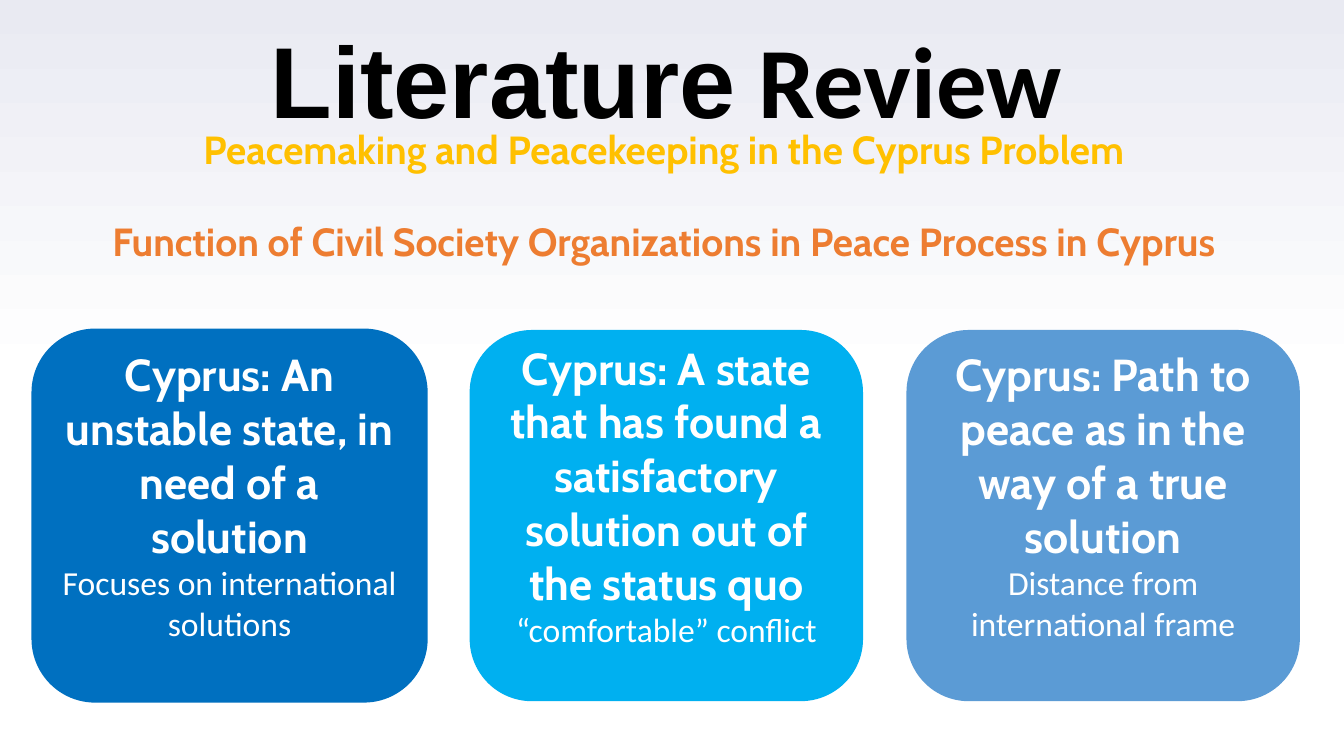
from copy import deepcopy

from pptx import Presentation
from pptx import util as u
from pptx.dml.color import RGBColor
from pptx.enum import shapes, text
from pptx.oxml import ns
from pptx.oxml.xmlchemy import OxmlElement


def rgb(value):
    return RGBColor.from_string(value)


def add_run(p, words, font="Calibri", size=24, color="FFFFFF", bold=False):
    r = p.add_run()
    r.text = words
    r.font.name = font
    r.font.size = u.Pt(size)
    r.font.bold = bold
    r.font.color.rgb = rgb(color)


class Deck:
    """Holds the style and the current slide, and adds its elements."""

    heading_font = "Cabin"
    card_top, card_width, card_height = 236.2, 280, 264.2

    def __init__(self, prs):
        self.s = prs.slides.add_slide(prs.slide_layouts[1])

    def background(self, stops, angle):
        fill = self.s.background.fill
        fill.gradient()
        fill.gradient_angle = angle
        gs_list = next(self.s.element.iter(ns.qn("a:gsLst")))
        gs_list.append(deepcopy(gs_list[-1]))
        for stop, (position, color) in zip(fill.gradient_stops, stops):
            stop.position = position
            stop.color.rgb = rgb(color)

    def place(self, sp, left, top, width, height):
        sp.left, sp.top, sp.width, sp.height = map(u.Pt, (left, top, width, height))
        tf = sp.text_frame
        tf.word_wrap = True
        tf.auto_size = text.MSO_AUTO_SIZE.NONE
        tf.vertical_anchor = text.MSO_ANCHOR.TOP
        tf.margin_left = tf.margin_right = tf.margin_top = tf.margin_bottom = 0
        return tf

    def title(self, runs, box):
        p = self.place(self.s.shapes.title, *box).paragraphs[0]
        p.alignment = text.PP_ALIGN.CENTER
        p.line_spacing = 0.9
        for words, font in runs:
            add_run(p, words, font=font, size=72, color="000000", bold=True)

    def body(self, lines, box):
        tf = self.place(self.s.placeholders[1], *box)
        for i, (words, color, gap) in enumerate(lines):
            p = tf.add_paragraph() if i else tf.paragraphs[0]
            p.alignment = text.PP_ALIGN.CENTER
            p.line_spacing = 0.9
            p.space_before = u.Pt(gap)
            pPr = p._p.get_or_add_pPr()
            pPr.set("marL", str(u.Pt(12)))
            pPr.set("indent", "0")
            pPr.append(OxmlElement("a:buNone"))
            add_run(p, words, font=self.heading_font, size=28, color=color, bold=True)

    def card(self, left, color, line_width, heading, note):
        sp = self.s.shapes.add_shape(
            shapes.MSO_SHAPE.ROUNDED_RECTANGLE,
            u.Pt(left), u.Pt(self.card_top), u.Pt(self.card_width), u.Pt(self.card_height))
        sp.shadow.inherit = False
        sp.fill.solid()
        sp.fill.fore_color.rgb = rgb(color)
        sp.line.color.rgb = rgb(color)
        sp.line.width = u.Pt(line_width)
        tf = sp.text_frame
        tf.word_wrap = True
        tf.vertical_anchor = text.MSO_ANCHOR.MIDDLE
        tf.margin_bottom = u.Pt(33)
        p = tf.paragraphs[0]
        p.alignment = text.PP_ALIGN.CENTER
        add_run(p, heading, font=self.heading_font, size=32, bold=True)
        p = tf.add_paragraph()
        p.alignment = text.PP_ALIGN.CENTER
        add_run(p, note)


def main():
    prs = Presentation()
    prs.slide_width, prs.slide_height = u.Pt(960), u.Pt(540)
    deck = Deck(prs)
    deck.background([(0, "FFFFFF"), (0.5, "FFFFFF"), (1, "E9EAF2")], 90)
    deck.title([("Literature", "Arial"), (" Review", "Calibri")], (0, 22.3, 952, 113.8))
    deck.body([
        ("Peacemaking and Peacekeeping in the Cyprus Problem", "FFC000", 8),
        ("Function of Civil Society Organizations in Peace Process in Cyprus", "ED7D31", 35),
    ], (7.9, 93.6, 920.2, 433.4))
    cards = [
        ("0070C0", 3, "Cyprus: An unstable state, in need of a solution",
         "Focuses on international solutions"),
        ("00B0F0", 1, "Cyprus: A state that has found a satisfactory solution out of the status quo",
         "“comfortable” conflict"),
        ("5B9BD5", 1, "Cyprus: Path to peace as in the way of a true solution",
         "Distance from international frame"),
    ]
    for i, card in enumerate(cards):
        deck.card(24 + 312 * i, *card)
    prs.save("out.pptx")


if __name__ == "__main__":
    main()
